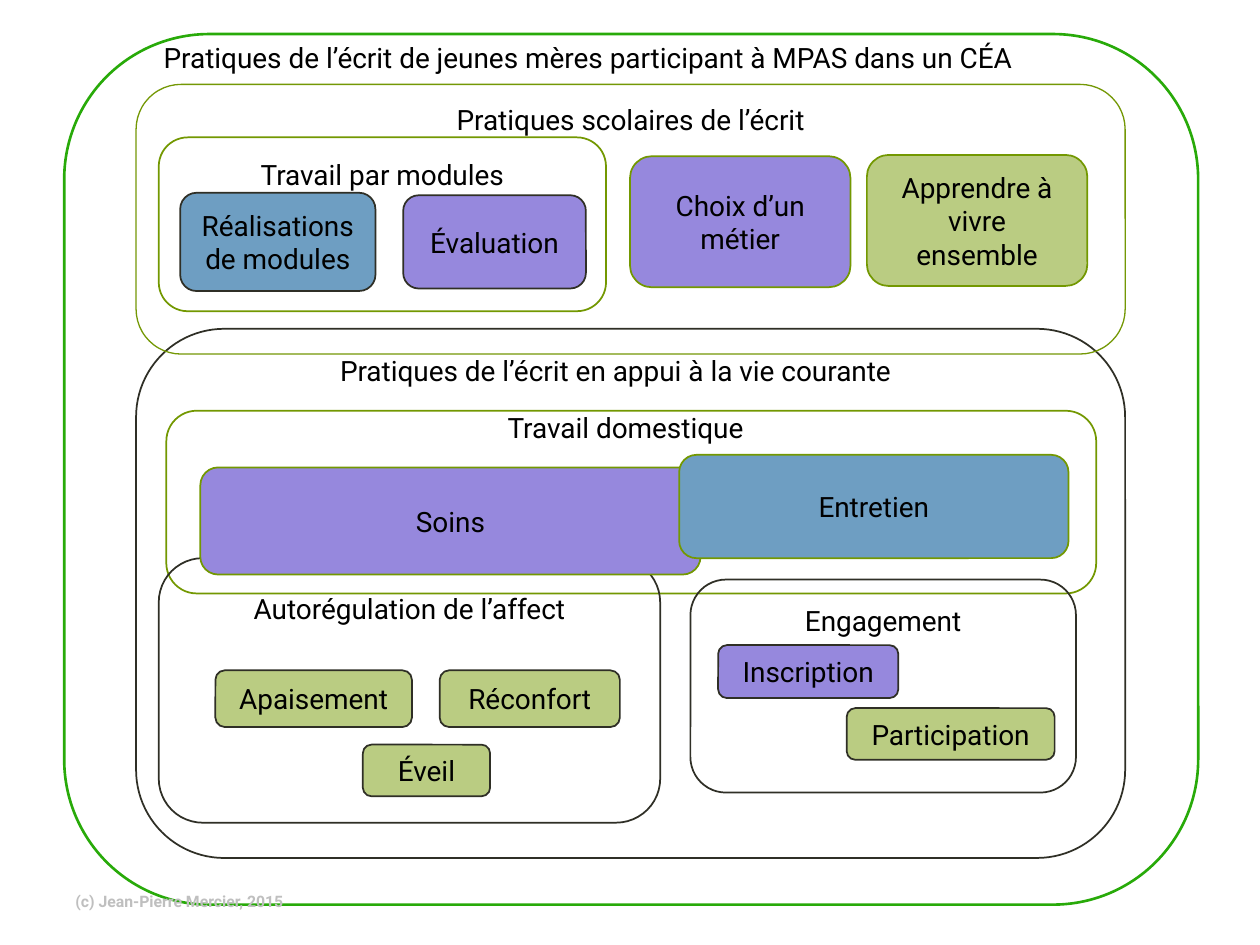
from dataclasses import dataclass

from pptx import Presentation
from pptx.dml.color import RGBColor as RGB
from pptx.enum.shapes import MSO_SHAPE as Shape
from pptx.enum.text import MSO_ANCHOR as Anchor, MSO_AUTO_SIZE as Fit, PP_ALIGN as Align
from pptx.util import Inches, Pt


@dataclass(frozen=True)
class Theme:
    font: str = "Roboto"
    body: int = 16
    small: int = 9
    ink: str = "000000"
    gray: str = "BFBFBF"
    white: str = "FFFFFF"
    dark: str = "2F2F26"
    green: str = "28AA09"
    olive: str = "739801"
    moss: str = "749805"
    blue: str = "6E9EC2"
    violet: str = "9688DD"
    lime: str = "BACC82"


T = Theme()


def write(frame, text, size=T.body, color=T.ink, bold=None, align=None):
    para = frame.paragraphs[0]
    para.alignment = align
    run = para.add_run()
    run.text = text
    run.font.name = T.font
    run.font.size = Pt(size)
    run.font.bold = bold
    run.font.color.rgb = RGB.from_string(color)


def panel(slide, at, line, width=1, fill=None):
    """Rounded outline, filled only when a fill is given."""
    shape = slide.shapes.add_shape(Shape.ROUNDED_RECTANGLE, *map(Inches, at))
    shape.shadow.inherit = False
    shape.line.color.rgb = RGB.from_string(line)
    shape.line.width = Pt(width)
    if fill:
        shape.fill.solid()
        shape.fill.fore_color.rgb = RGB.from_string(fill)
    else:
        shape.fill.background()
    return shape


def group(slide, text, at, line, inset, width=1):
    """Panel with its heading at the top."""
    frame = panel(slide, at, line, width).text_frame
    frame.word_wrap = True
    frame.vertical_anchor = Anchor.TOP
    frame.margin_top = Inches(inset)
    write(frame, text, align=Align.CENTER)


def box(slide, text, at, fill, line=T.dark):
    """Filled panel with centred text."""
    frame = panel(slide, at, line, fill=fill).text_frame
    frame.word_wrap = True
    frame.vertical_anchor = Anchor.MIDDLE
    write(frame, text, align=Align.CENTER)


def title(slide, text, at):
    """Free heading on one line."""
    frame = slide.shapes.add_textbox(*map(Inches, at)).text_frame
    frame.word_wrap = False
    frame.auto_size = Fit.SHAPE_TO_FIT_TEXT
    write(frame, text)


def credit(slide, text, at):
    frame = slide.shapes.add_textbox(*map(Inches, at)).text_frame
    frame.word_wrap = True
    frame.vertical_anchor = Anchor.MIDDLE
    write(frame, text, T.small, T.gray, bold=True)


def school(slide):
    group(slide, "Pratiques scolaires de l’écrit", (1.08, 0.67, 7.85, 2.14), T.moss, 0.04, 0.75)
    group(slide, "Travail par modules", (1.26, 1.09, 3.55, 1.38), T.olive, 0.09)
    box(slide, "Réalisations de modules", (1.43, 1.53, 1.55, 0.78), T.blue)
    box(slide, "Évaluation", (3.2, 1.55, 1.45, 0.74), T.violet)
    box(slide, "Choix d’un métier", (5, 1.24, 1.75, 1.04), T.violet, T.olive)
    box(slide, "Apprendre à vivre ensemble", (6.88, 1.23, 1.75, 1.04), T.lime, T.olive)


def daily(slide):
    # Overlapping outlines and headings
    panel(slide, (1.32, 3.26, 7.38, 1.45), T.olive)
    title(slide, "Pratiques de l’écrit en appui à la vie courante", (2.6, 2.76, 5.05, 0.37))
    group(slide, "Autorégulation de l’affect", (1.26, 4.43, 3.98, 2.1), T.dark, 0.16)
    title(slide, "Travail domestique", (3.93, 3.21, 2.21, 0.37))
    group(slide, "Engagement", (5.48, 4.6, 3.06, 1.69), T.dark, 0.11)

    # Housework
    box(slide, "Soins", (1.59, 3.71, 3.97, 0.85), T.violet, T.olive)
    box(slide, "Entretien", (5.39, 3.61, 3.09, 0.82), T.blue, T.olive)

    # Affect and engagement
    for text, at, fill in (
        ("Éveil", (2.88, 5.91, 1.01, 0.41), T.lime),
        ("Réconfort", (3.49, 5.32, 1.43, 0.45), T.lime),
        ("Apaisement", (1.71, 5.32, 1.56, 0.45), T.lime),
        ("Inscription", (5.7, 5.12, 1.43, 0.42), T.violet),
        ("Participation", (6.72, 5.62, 1.65, 0.41), T.lime),
    ):
        box(slide, text, at, fill)


def main():
    deck = Presentation()
    deck.slide_width, deck.slide_height = Inches(10), Inches(7.5)
    slide = deck.slides.add_slide(deck.slide_layouts[6])

    # Outer frame, then the outline of daily life behind the school part
    panel(slide, (0.51, 0.27, 9, 6.91), T.green, 1.5, T.white)
    title(slide, "Pratiques de l’écrit de jeunes mères participant à MPAS dans un CÉA",
          (1.2, 0.27, 7.61, 0.37))
    panel(slide, (1.08, 2.61, 7.85, 4.2), T.dark)
    school(slide)
    daily(slide)
    credit(slide, "(c) Jean-Pierre Mercier, 2015", (0.5, 6.95, 3.17, 0.4))
    deck.save("out.pptx")


if __name__ == "__main__":
    main()
